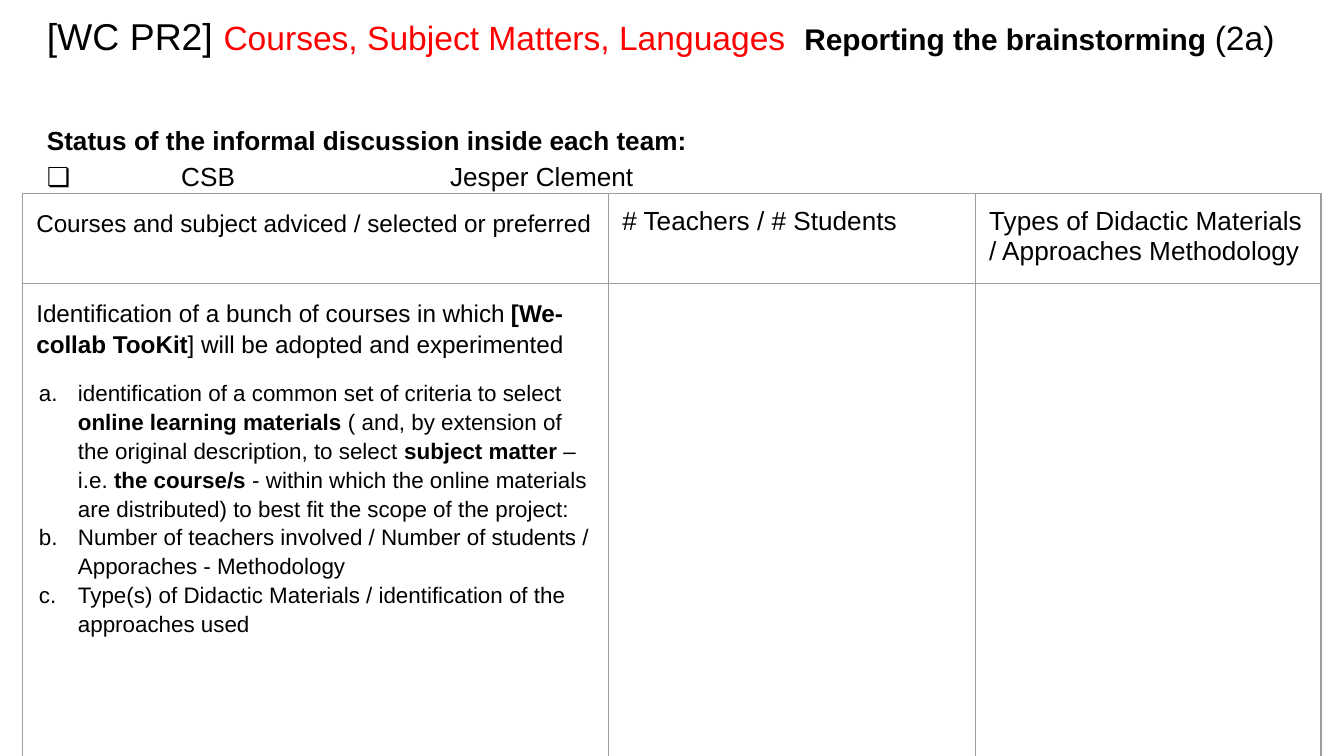
from lxml import etree
from pptx import Presentation
from pptx import util as u
from pptx.dml.color import RGBColor
from pptx.enum import text
from pptx.oxml import ns

BLACK = RGBColor(0, 0, 0)
RED = RGBColor(255, 0, 0)
GRAY = RGBColor(0x9E, 0x9E, 0x9E)


def node(parent, tag, **attrs):
    return etree.SubElement(parent, ns.qn("a:" + tag), attrs)


def write(frame, *runs, size=14, bold=False, lines=1.0, before=0, new=False):
    """Fill a paragraph; each run is a string or (string, format overrides)."""
    para = frame.add_paragraph() if new else frame.paragraphs[0]
    para.alignment = text.PP_ALIGN.LEFT
    para.space_before = u.Pt(before)
    para.line_spacing = lines
    for item in runs:
        words, look = (item, {}) if isinstance(item, str) else item
        run = para.add_run()
        run.text = words
        run.font.name = "Arial"
        run.font.size = u.Pt(look.get("size", size))
        run.font.bold = look.get("bold", bold)
        run.font.color.rgb = look.get("color", BLACK)
    return para


deck = Presentation()
deck.slide_width = u.Inches(10)
deck.slide_height = deck.slide_width * 9 // 16
slide = deck.slides.add_slide(deck.slide_layouts[6])
strong = {"bold": True}

# Title and status
frames = []
for place in [(0.25, 0, 9.58, 0.78), (0.25, 0.79, 9.32, 0.74)]:
    frame = slide.shapes.add_textbox(*map(u.Inches, place)).text_frame
    frame.word_wrap = True
    frame.margin_left = frame.margin_right = u.Inches(0.1)
    frame.margin_top = frame.margin_bottom = u.Inches(0.1)
    frames.append(frame)
title, status = frames

write(title, ("[WC PR2] ", {"size": 20}),
      ("Courses, Subject Matters, Languages  ", {"color": RED}),
      ("Reporting the brainstorming ", {"size": 16, "bold": True}),
      "(2a)", size=18)
write(status, "Status of the informal discussion inside each team:",
      bold=True, lines=1.15)
team = write(status, "❏\tCSB  \t\tJesper Clement", lines=1.15, new=True)
tabs = node(team._p.get_or_add_pPr(), "tabLst")
for stop in (1, 2, 3):
    node(tabs, "tab", pos=str(u.Inches(stop)), algn="l")

# Table grid
table = slide.shapes.add_table(2, 3, *map(u.Inches, (0.17, 1.44, 9.66, 4.17))).table
table.first_row = table.horz_banding = False
for col, width in zip(table.columns, (4.36, 2.73, 2.57)):
    col.width = u.Inches(width)
for row, height in zip(table.rows, (0.65, 3.52)):
    row.height = u.Inches(height)
for cell in table.iter_cells():
    cell.margin_left = cell.margin_right = u.Inches(0.1)
    cell.margin_top = cell.margin_bottom = u.Inches(0.1)
    props = cell._tc.get_or_add_tcPr()
    for side in ("lnL", "lnR", "lnT", "lnB"):
        line = node(props, side, w=str(u.Pt(0.75)))
        node(node(line, "solidFill"), "srgbClr", val=str(GRAY))
    cell.fill.background()

# Table text
write(table.cell(0, 0).text_frame,
      "Courses and subject adviced / selected or preferred",
      size=13, lines=1.15, before=10)
write(table.cell(0, 1).text_frame, "# Teachers / # Students")
write(table.cell(0, 2).text_frame,
      "Types of Didactic Materials / Approaches Methodology")

plan = table.cell(1, 0).text_frame
write(plan, "Identification of a bunch of courses in which ",
      ("[We-collab TooKit", strong), "] will be adopted and experimented",
      size=13, lines=1.15, before=10)
steps = [
    ["identification of a common set of criteria to select ",
     ("online learning materials", strong),
     " ( and, by extension of the original description, to select ",
     ("subject matter", strong), " – i.e. ", ("the course/s ", strong),
     "- within which the online materials are distributed) "
     "to best fit the scope of the project:"],
    ["Number of teachers involved / Number of students / "
     "Apporaches - Methodology"],
    ["Type(s) of Didactic Materials / identification of the approaches used"],
]
for num, step in enumerate(steps):
    para = write(plan, *step, size=12, lines=1.15,
                 before=0 if num else 10, new=True)
    props = para._p.get_or_add_pPr()
    props.set("marL", str(u.Inches(0.31)))
    props.set("indent", str(u.Inches(-0.29)))
    node(node(props, "buClr"), "srgbClr", val=str(BLACK))
    node(props, "buFont", typeface="Arial")
    node(props, "buAutoNum", type="alphaLcPeriod")

deck.save("out.pptx")
